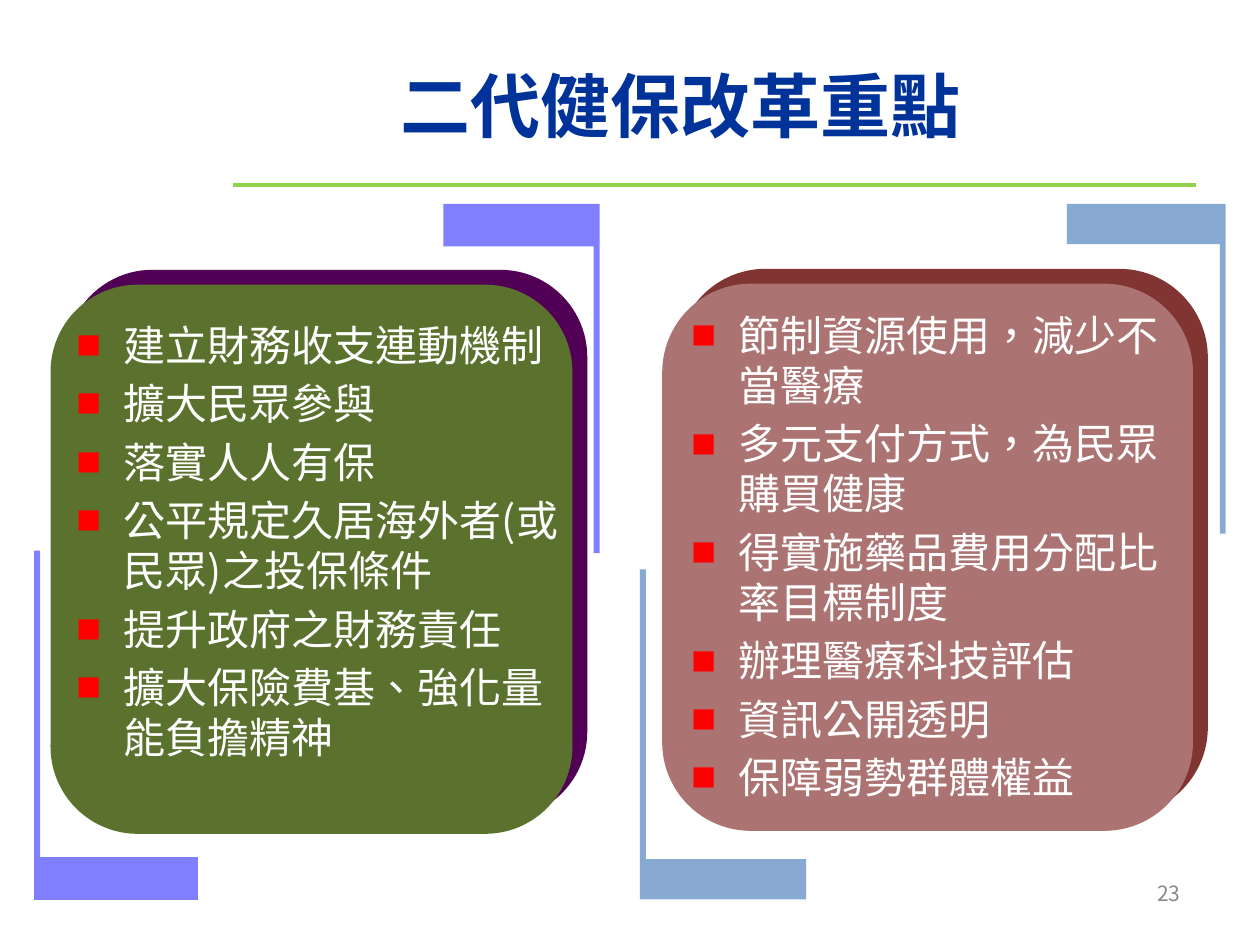
from lxml.etree import SubElement as Sub
from pptx import Presentation
from pptx.dml.color import RGBColor as RGB
from pptx.enum.shapes import MSO_CONNECTOR as Link, MSO_SHAPE as Kind
from pptx.enum.text import MSO_ANCHOR as Anchor, PP_ALIGN as Align
from pptx.oxml.ns import qn
from pptx.util import Cm, Pt

FONT = "Noto Sans CJK SC"
WHITE = RGB(0xFF, 0xFF, 0xFF)
NAVY = RGB(0x00, 0x33, 0x99)
GRAY = RGB(0x89, 0x89, 0x89)
LIME = RGB(0x92, 0xD0, 0x50)
BLUE = RGB(0x00, 0x00, 0xFF)
STEEL = RGB(0x4F, 0x81, 0xBD)
GREEN = RGB(0x5A, 0x72, 0x2D)
PURPLE = RGB(0x52, 0x00, 0x55)
ROSE = RGB(0xAB, 0x74, 0x72)
MAROON = RGB(0x80, 0x35, 0x33)

FUNDS = [
    "建立財務收支連動機制",
    "擴大民眾參與",
    "落實人人有保",
    "公平規定久居海外者(或民眾)之投保條件",
    "提升政府之財務責任",
    "擴大保險費基、強化量能負擔精神",
]
CARE = [
    "節制資源使用，減少不當醫療",
    "多元支付方式，為民眾購買健康",
    "得實施藥品費用分配比率目標制度",
    "辦理醫療科技評估",
    "資訊公開透明",
    "保障弱勢群體權益",
]


def paint(shape, color, alpha=100):
    shape.shadow.inherit = False
    shape.fill.solid()
    shape.fill.fore_color.rgb = color
    shape.line.fill.background()
    if alpha < 100:
        tone = shape.fill._xPr.find(".//" + qn("a:srgbClr"))
        Sub(tone, qn("a:alpha"), val=str(alpha * 1000))


def add_rule(slide, left, right, y):
    rule = slide.shapes.add_connector(Link.STRAIGHT, Cm(left), Cm(y), Cm(right), Cm(y))
    rule.line.color.rgb = LIME
    rule.line.width = Pt(2.25)
    Sub(rule._element.spPr, qn("a:effectLst"))


def add_corner(slide, box, foot, color, alpha, upper=False):
    left, top, width, height = box
    stem = 0.12
    spots = [(0, 0), (stem, 0), (stem, height - foot),
             (width, height - foot), (width, height), (0, height)]
    if upper:
        spots = [(width - x, height - y) for x, y in spots]
    spots = [(Cm(left + x), Cm(top + y)) for x, y in spots]
    pen = slide.shapes.build_freeform(*spots[0])
    pen.add_line_segments(spots[1:], close=True)
    paint(pen.convert_to_shape(), color, alpha)


def add_card(slide, box, face, side):
    left, top, width, height = box
    for shift, color in ((0.3, side), (0, face)):
        card = slide.shapes.add_shape(
            Kind.ROUNDED_RECTANGLE, Cm(left + shift), Cm(top - shift), Cm(width), Cm(height))
        card.adjustments[0] = 0.167
        paint(card, color)


def add_box(slide, box):
    frame = slide.shapes.add_textbox(*map(Cm, box)).text_frame
    frame.word_wrap = True
    return frame


def add_run(para, text, size, color, bold=False):
    run = para.add_run()
    run.text = text
    font = run.font
    font.name, font.size, font.bold = FONT, Pt(size), bold
    font.color.rgb = color
    props = run._r.get_or_add_rPr()
    props.set("lang", "zh-TW")
    Sub(props, qn("a:ea"), typeface=FONT)


def add_mark(para):
    props = para._p.get_or_add_pPr()
    props.set("marL", str(Cm(0.95)))
    props.set("indent", str(-Cm(0.95)))
    Sub(Sub(props, qn("a:buClr")), qn("a:srgbClr"), val="FF0000")
    Sub(props, qn("a:buSzPct"), val="60000")
    Sub(props, qn("a:buFont"), typeface=FONT)
    Sub(props, qn("a:buChar"), char="■")


def add_list(slide, box, items):
    frame = add_box(slide, box)
    for num, item in enumerate(items):
        para = frame.add_paragraph() if num else frame.paragraphs[0]
        add_mark(para)
        para.line_spacing = Pt(28.6)
        if num:
            para.space_before = Pt(4.8)
        add_run(para, item, 24, WHITE)


def add_label(slide, box, text, size, color, align, bold=False):
    frame = add_box(slide, box)
    frame.vertical_anchor = Anchor.MIDDLE if bold else Anchor.TOP
    para = frame.paragraphs[0]
    para.alignment = align
    add_run(para, text, size, color, bold)


def main():
    deck = Presentation()
    deck.slide_width, deck.slide_height = Cm(25.4), Cm(19.05)
    slide = deck.slides.add_slide(deck.slide_layouts[6])

    add_rule(slide, 4.7, 24.1, 3.73)
    add_corner(slide, (12.9, 11.48, 3.35, 6.65), 0.81, STEEL, 68)
    add_corner(slide, (21.51, 4.11, 3.2, 6.65), 0.81, STEEL, 68, upper=True)
    add_card(slide, (13.35, 5.72, 10.7, 11.03), ROSE, MAROON)
    add_corner(slide, (0.69, 11.1, 3.3, 7.04), 0.86, BLUE, 50)
    add_corner(slide, (8.94, 4.11, 3.15, 7.04), 0.86, BLUE, 50, upper=True)
    add_card(slide, (1.02, 5.74, 10.52, 11.07), GREEN, PURPLE)

    add_list(slide, (1.3, 6.32, 10.21, 9.5), FUNDS)
    add_list(slide, (13.69, 6.12, 10.01, 10.52), CARE)
    add_label(slide, (3.91, 0.91, 19.61, 2.39), "二代健保改革重點", 40, NAVY, Align.CENTER, bold=True)
    add_label(slide, (16, 17.63, 8.05, 1.02), "23", 12, GRAY, Align.RIGHT)
    deck.save("out.pptx")


if __name__ == "__main__":
    main()
